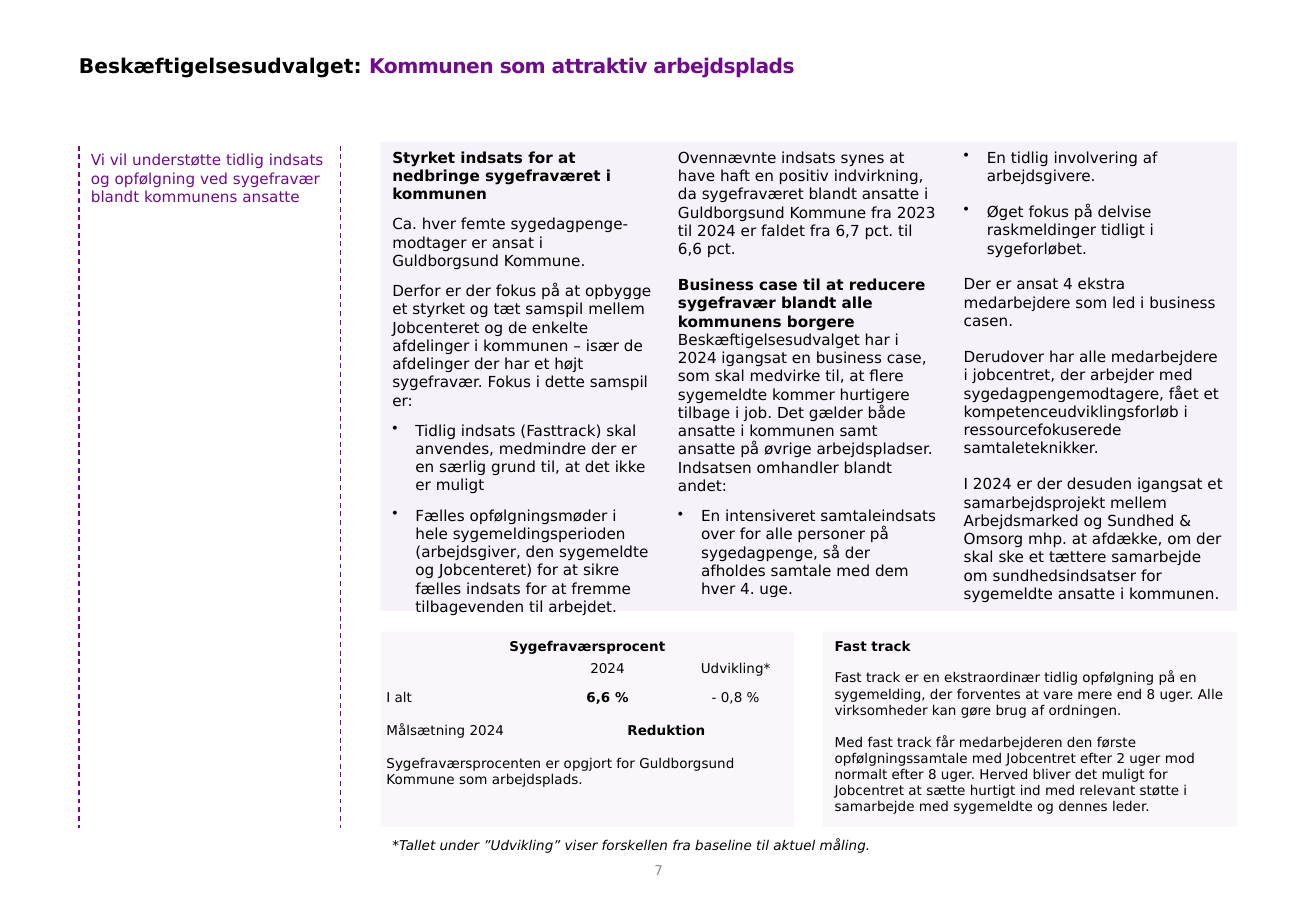
from pptx import Presentation
from pptx.dml.color import RGBColor
from pptx.enum.dml import MSO_LINE
from pptx.enum.shapes import MSO_CONNECTOR, MSO_SHAPE
from pptx.enum.text import MSO_ANCHOR, MSO_AUTO_SIZE, PP_ALIGN
from pptx.oxml.ns import qn
from pptx.oxml.xmlchemy import OxmlElement
from pptx.util import Inches, Pt

DASH = MSO_LINE.DASH
STRAIGHT = MSO_CONNECTOR.STRAIGHT
RECTANGLE = MSO_SHAPE.RECTANGLE
TOP, MIDDLE = MSO_ANCHOR.TOP, MSO_ANCHOR.MIDDLE
NO_AUTOFIT = MSO_AUTO_SIZE.NONE
LEFT, CENTER = PP_ALIGN.LEFT, PP_ALIGN.CENTER
PLAIN_TABLE = "{2D5ABB26-0587-4C30-8999-92F81FD0307C}"

# Space before a paragraph, in points
SMALL_GAP, LINE_GAP, PANEL_GAP = 7, 10.5, 9.3

# Text of the main panel: (text, space before, style)
INITIATIVES = [
    ("Styrket indsats for at nedbringe sygefraværet i kommunen", 0, "bold"),
    ("Ca. hver femte sygedagpenge-modtager er ansat i Guldborgsund Kommune.", SMALL_GAP, ""),
    ("Derfor er der fokus på at opbygge et styrket og tæt samspil mellem Jobcenteret og de "
     "enkelte afdelinger i kommunen – især de afdelinger der har et højt sygefravær. Fokus i "
     "dette samspil er:", SMALL_GAP, ""),
    ("Tidlig indsats (Fasttrack) skal anvendes, medmindre der er en særlig grund til, at det "
     "ikke er muligt", SMALL_GAP, "bullet"),
    ("Fælles opfølgningsmøder i hele sygemeldingsperioden (arbejdsgiver, den sygemeldte og "
     "Jobcenteret) for at sikre fælles indsats for at fremme tilbagevenden til arbejdet.",
     SMALL_GAP, "bullet"),
    ("Ovennævnte indsats synes at have haft en positiv indvirkning, da sygefraværet blandt "
     "ansatte i Guldborgsund Kommune fra 2023 til 2024 er faldet fra 6,7 pct. til 6,6 pct.",
     LINE_GAP, ""),
    ("Business case til at reducere sygefravær blandt alle kommunens borgere", LINE_GAP, "bold"),
    ("Beskæftigelsesudvalget har i 2024 igangsat en business case, som skal medvirke til, at "
     "flere sygemeldte kommer hurtigere tilbage i job. Det gælder både ansatte i kommunen samt "
     "ansatte på øvrige arbejdspladser. Indsatsen omhandler blandt andet:", 0, ""),
    ("En intensiveret samtaleindsats over for alle personer på sygedagpenge, så der afholdes "
     "samtale med dem hver 4. uge.", SMALL_GAP, "bullet"),
    ("En tidlig involvering af arbejdsgivere.", LINE_GAP, "bullet"),
    ("Øget fokus på delvise raskmeldinger tidligt i sygeforløbet.", LINE_GAP, "bullet"),
    ("Der er ansat 4 ekstra medarbejdere som led i business casen.", LINE_GAP, ""),
    ("Derudover har alle medarbejdere i jobcentret, der arbejder med sygedagpengemodtagere, "
     "fået et kompetenceudviklingsforløb i ressourcefokuserede samtaleteknikker.", LINE_GAP, ""),
    ("I 2024 er der desuden igangsat et samarbejdsprojekt mellem Arbejdsmarked og Sundhed & "
     "Omsorg mhp. at afdække, om der skal ske et tættere samarbejde om sundhedsindsatser for "
     "sygemeldte ansatte i kommunen.", LINE_GAP, ""),
]
FAST_TRACK = [
    ("Fast track", 0, "bold"),
    ("Fast track er en ekstraordinær tidlig opfølgning på en sygemelding, der forventes at vare "
     "mere end 8 uger. Alle virksomheder kan gøre brug af ordningen.", PANEL_GAP, ""),
    ("Med fast track får medarbejderen den første opfølgningssamtale med Jobcentret efter 2 uger "
     "mod normalt efter 8 uger. Herved bliver det muligt for Jobcentret at sætte hurtigt ind med "
     "relevant støtte i samarbejde med sygemeldte og dennes leder.", PANEL_GAP, ""),
]
ABSENCE_ROWS = [
    ["", "2024", "Udvikling*"],
    ["I alt", "6,6 %", "- 0,8 %"],
    ["Målsætning 2024", "Reduktion", ""],
    ["Sygefraværsprocenten er opgjort for Guldborgsund Kommune som arbejdsplads.", "", ""],
]
BOLD_VALUES = {"6,6 %", "Reduktion"}


def rgb(value):
    return RGBColor.from_string(value)


class SlideBuilder:
    FONT, PURPLE, BLACK, GREY = "DejaVu Sans", "710B8E", "000000", "8C8C8C"

    def __init__(self, slide):
        self.slide = slide

    def format_run(self, run, size, color=BLACK, bold=False, italic=False):
        font = run.font
        font.name, font.size, font.bold, font.italic = self.FONT, Pt(size), bold, italic
        font.color.rgb = rgb(color)

    def fill_frame(self, frame, content, size, color=BLACK, align=LEFT):
        """Fill a text frame with (text, space before, style) paragraphs."""
        frame.text = "\n".join(text for text, _, _ in content)
        for paragraph, (_, gap, style) in zip(frame.paragraphs, content):
            paragraph.alignment = align
            paragraph.space_before = Pt(gap)
            if style == "bullet":
                properties = paragraph._p.get_or_add_pPr()
                properties.set("marL", str(Inches(0.19)))
                properties.set("indent", str(-Inches(0.19)))
                bullet = OxmlElement("a:buChar")
                bullet.set("char", "•")
                properties.append(bullet)
            for run in paragraph.runs:
                self.format_run(run, size, color, style == "bold", style == "italic")

    def title(self, box, parts):
        shape = self.slide.shapes.title
        shape.left, shape.top, shape.width, shape.height = map(Inches, box)
        frame = shape.text_frame
        frame.auto_size, frame.vertical_anchor = NO_AUTOFIT, TOP
        frame.margin_left = frame.margin_right = frame.margin_bottom = 0
        frame.margin_top = Inches(0.02)
        paragraph = frame.paragraphs[0]
        paragraph.alignment = LEFT
        for text, color, spacing in parts:
            run = paragraph.add_run()
            run.text = text
            self.format_run(run, 12, color, bold=True)
            run._r.get_or_add_rPr().set("spc", str(spacing))

    def text(self, box, content, size, color=BLACK, align=LEFT, anchor=TOP, wrap=True):
        frame = self.slide.shapes.add_textbox(*map(Inches, box)).text_frame
        frame.word_wrap, frame.vertical_anchor = wrap, anchor
        self.fill_frame(frame, content, size, color, align)

    def panel(self, box, opacity, content, size, align=LEFT, columns=1):
        shape = self.slide.shapes.add_shape(RECTANGLE, *map(Inches, box))
        shape.shadow.inherit = False
        shape.line.fill.background()
        shape.fill.solid()
        shape.fill.fore_color.rgb = rgb(self.PURPLE)
        alpha = OxmlElement("a:alpha")
        alpha.set("val", str(opacity * 1000))
        shape._element.spPr.find(".//" + qn("a:srgbClr")).append(alpha)
        frame = shape.text_frame
        frame.word_wrap, frame.vertical_anchor = True, TOP
        if columns > 1:
            frame._txBody.bodyPr.set("numCol", str(columns))
            frame._txBody.bodyPr.set("spcCol", str(Inches(0.2)))
        self.fill_frame(frame, content, size, align=align)

    def dashed_line(self, x, top, bottom):
        line = self.slide.shapes.add_connector(
            STRAIGHT, Inches(x), Inches(top), Inches(x), Inches(bottom))
        line.line.color.rgb = rgb(self.PURPLE)
        line.line.width, line.line.dash_style = Pt(0.75), DASH
        line._element.spPr.append(OxmlElement("a:effectLst"))

    def table(self, box, widths, heights, rows):
        table = self.slide.shapes.add_table(len(rows), len(widths), *map(Inches, box)).table
        table.first_row = table.horz_banding = False
        table._tbl.tblPr.find(qn("a:tableStyleId")).text = PLAIN_TABLE
        for column, width in zip(table.columns, widths):
            column.width = Inches(width)
        for row, height in zip(table.rows, heights):
            row.height = Inches(height)
        for row_index, values in enumerate(rows):
            for column_index, value in enumerate(values):
                cell = table.cell(row_index, column_index)
                cell.fill.background()
                cell.margin_left = cell.margin_right = Inches(0.05)
                cell.margin_top = cell.margin_bottom = Inches(0.05)
                cell.vertical_anchor = MIDDLE if row_index == 2 else TOP
                style = "bold" if value in BOLD_VALUES else ""
                self.fill_frame(cell.text_frame, [(value, 0, style)], 8,
                                align=CENTER if column_index else LEFT)
                if not value:
                    end = cell.text_frame.paragraphs[0]._p.get_or_add_endParaRPr()
                    end.set("sz", "800")
        table.cell(2, 1).merge(table.cell(2, 2))
        table.cell(3, 0).merge(table.cell(3, 2))


def main():
    presentation = Presentation()
    presentation.slide_width, presentation.slide_height = Inches(10.83), Inches(7.5)
    builder = SlideBuilder(presentation.slides.add_slide(presentation.slide_layouts[5]))

    # Title
    builder.title((0.65, 0.42, 8.25, 0.21), [
        ("Beskæftigelsesudvalget: ", builder.BLACK, 0),
        ("Kommunen som attraktiv arbejdsplads", builder.PURPLE, -30)])

    # Goal between dashed lines
    for x in (0.65, 2.8):
        builder.dashed_line(x, 1.2, 6.82)
    builder.text((0.65, 1.19, 2.14, 5.61), [
        ("Vi vil understøtte tidlig indsats og opfølgning ved sygefravær blandt kommunens "
         "ansatte", 0, "")], 9, builder.PURPLE)

    # Initiatives in three columns
    builder.panel((3.13, 1.17, 7.05, 3.86), 5, INITIATIVES, 9, columns=3)

    # Absence figures and fast track
    builder.panel((3.13, 5.2, 3.41, 1.61), 3, [("Sygefraværsprocent", 0, "bold")], 8, CENTER)
    builder.table((3.13, 5.39, 3.41, 1.06), (1.3, 1.14, 0.97), (0.24, 0.2, 0.31, 0.31),
                  ABSENCE_ROWS)
    builder.panel((6.77, 5.2, 3.41, 1.61), 3, FAST_TRACK, 8)

    # Footnote and page number
    builder.text((3.13, 6.84, 4.21, 0.24), [
        ("*Tallet under ”Udvikling” viser forskellen fra baseline til aktuel måling.", 0,
         "italic")], 8, wrap=False)
    builder.text((4.2, 6.96, 2.44, 0.4), [("7", 0, "")], 8, builder.GREY, CENTER, MIDDLE)

    presentation.save("out.pptx")


if __name__ == "__main__":
    main()
